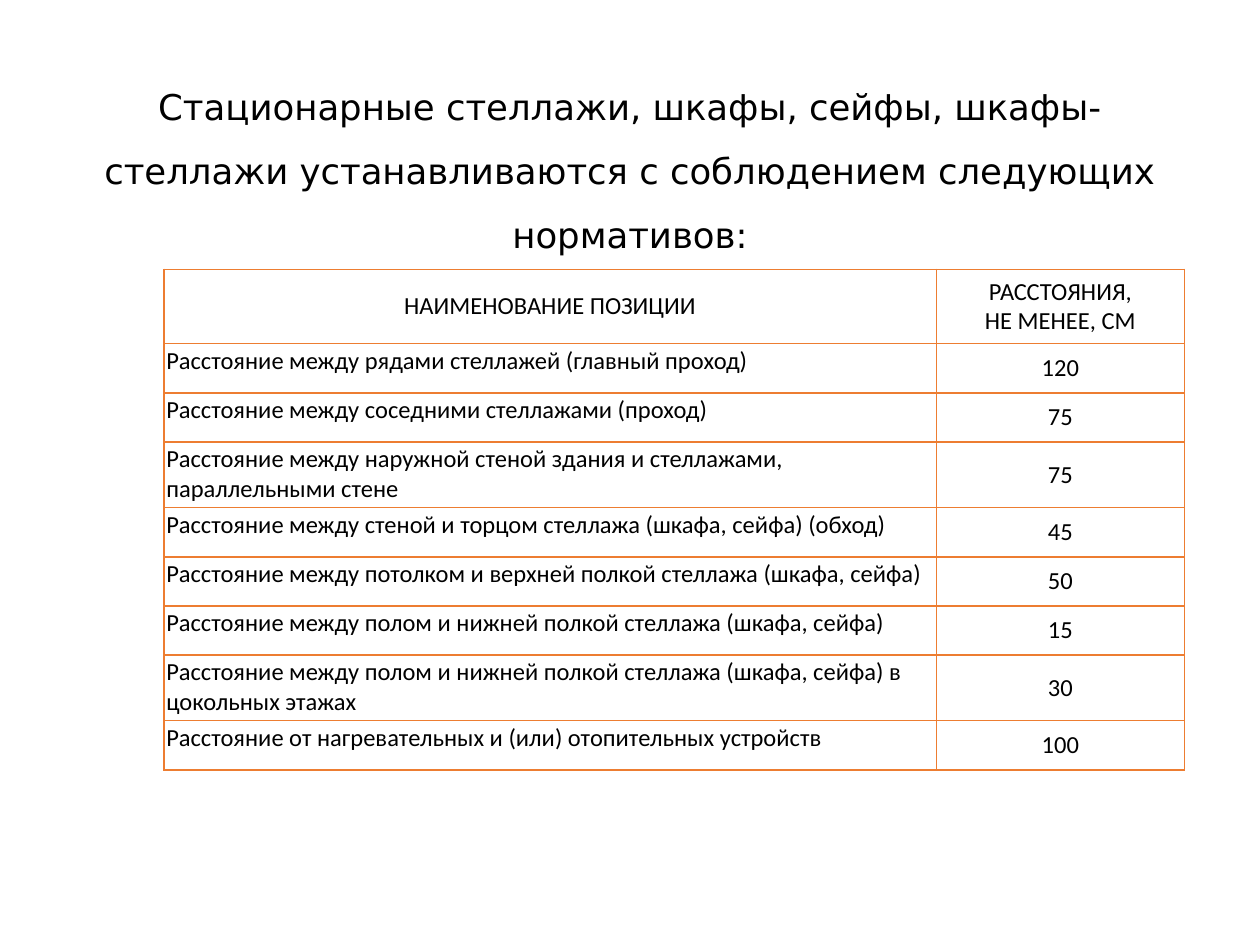
from lxml import etree
from pptx import Presentation
from pptx import util as u
from pptx.dml.color import RGBColor
from pptx.enum import text
from pptx.oxml.ns import qn

BLACK = RGBColor(0, 0, 0)
ORANGE = RGBColor(0xED, 0x7D, 0x31)
WIDE, HIGH = u.Inches(10), u.Inches(7.5)
MID = text.PP_ALIGN.CENTER
LEFT = text.PP_ALIGN.LEFT

TITLE = ("Стационарные стеллажи, шкафы, сейфы, шкафы-стеллажи "
         "устанавливаются с соблюдением следующих нормативов:")
ROWS = [
    ("НАИМЕНОВАНИЕ ПОЗИЦИИ", "РАССТОЯНИЯ,\nНЕ МЕНЕЕ, СМ"),
    ("Расстояние между рядами стеллажей (главный проход)", "120"),
    ("Расстояние между соседними стеллажами (проход)", "75"),
    ("Расстояние между наружной стеной здания и стеллажами, "
     "параллельными стене", "75"),
    ("Расстояние между стеной и торцом стеллажа (шкафа, сейфа) (обход)", "45"),
    ("Расстояние между потолком и верхней полкой стеллажа (шкафа, сейфа)", "50"),
    ("Расстояние между полом и нижней полкой стеллажа (шкафа, сейфа)", "15"),
    ("Расстояние между полом и нижней полкой стеллажа (шкафа, сейфа) "
     "в цокольных этажах", "30"),
    ("Расстояние от нагревательных и (или) отопительных устройств", "100"),
]
SHARES = (0.757, 0.243)
HEAD, LINE, TALL = 0.59, 0.39, 0.52
HEIGHTS = [HEAD, LINE, LINE, TALL, LINE, LINE, LINE, TALL, LINE]


def write(frame, words, font, size, align):
    frame.text = words
    for para in frame.paragraphs:
        para.alignment = align
        for run in para.runs:
            run.font.name = font
            run.font.size = u.Pt(size)
            run.font.color.rgb = BLACK


def border(cell):
    """Draw a thin orange line on all four sides of the cell."""
    props = cell._tc.get_or_add_tcPr()
    for place, side in enumerate(("a:lnL", "a:lnR", "a:lnT", "a:lnB")):
        line = etree.Element(qn(side), w=str(u.Pt(1)))
        fill = etree.SubElement(line, qn("a:solidFill"))
        etree.SubElement(fill, qn("a:srgbClr"), val=str(ORANGE))
        props.insert(place, line)


def title(slide, left, top, width, height):
    frame = slide.shapes.add_textbox(left, top, width, height).text_frame
    frame.word_wrap = True
    frame.vertical_anchor = text.MSO_ANCHOR.BOTTOM
    frame.margin_top = frame.margin_bottom = 0
    write(frame, TITLE, "DejaVu Sans", 20.3, MID)
    frame.paragraphs[0].line_spacing = 1.5


def norms(slide, left, top, width, height):
    """Place the table of distances, its rows sharing the height."""
    table = slide.shapes.add_table(
        len(ROWS), len(SHARES), left, top, width, height).table
    table.first_row = table.horz_banding = False
    for col, share in zip(table.columns, SHARES):
        col.width = int(width * share)
    for row, part in zip(table.rows, HEIGHTS):
        row.height = int(height * part / sum(HEIGHTS))
    for r, words in enumerate(ROWS):
        for c, word in enumerate(words):
            cell = table.cell(r, c)
            label = r > 0 and c == 0
            cell.fill.background()
            cell.margin_left = cell.margin_right = u.Inches(0.02)
            cell.margin_top = cell.margin_bottom = u.Inches(0.02)
            cell.vertical_anchor = (
                text.MSO_ANCHOR.TOP if label else text.MSO_ANCHOR.MIDDLE)
            write(cell.text_frame, word, "Calibri", 14, LEFT if label else MID)
            border(cell)


def main():
    deck = Presentation()
    deck.slide_width, deck.slide_height = WIDE, HIGH
    slide = deck.slides.add_slide(deck.slide_layouts[6])
    title(slide, int(WIDE * 0.07), int(HIGH * 0.07),
          int(WIDE * 0.86), int(HIGH * 0.2))
    norms(slide, int(WIDE * 0.13), int(HIGH * 0.285),
          int(WIDE * 0.81), int(HIGH * 0.53))
    deck.save("out.pptx")


if __name__ == "__main__":
    main()
